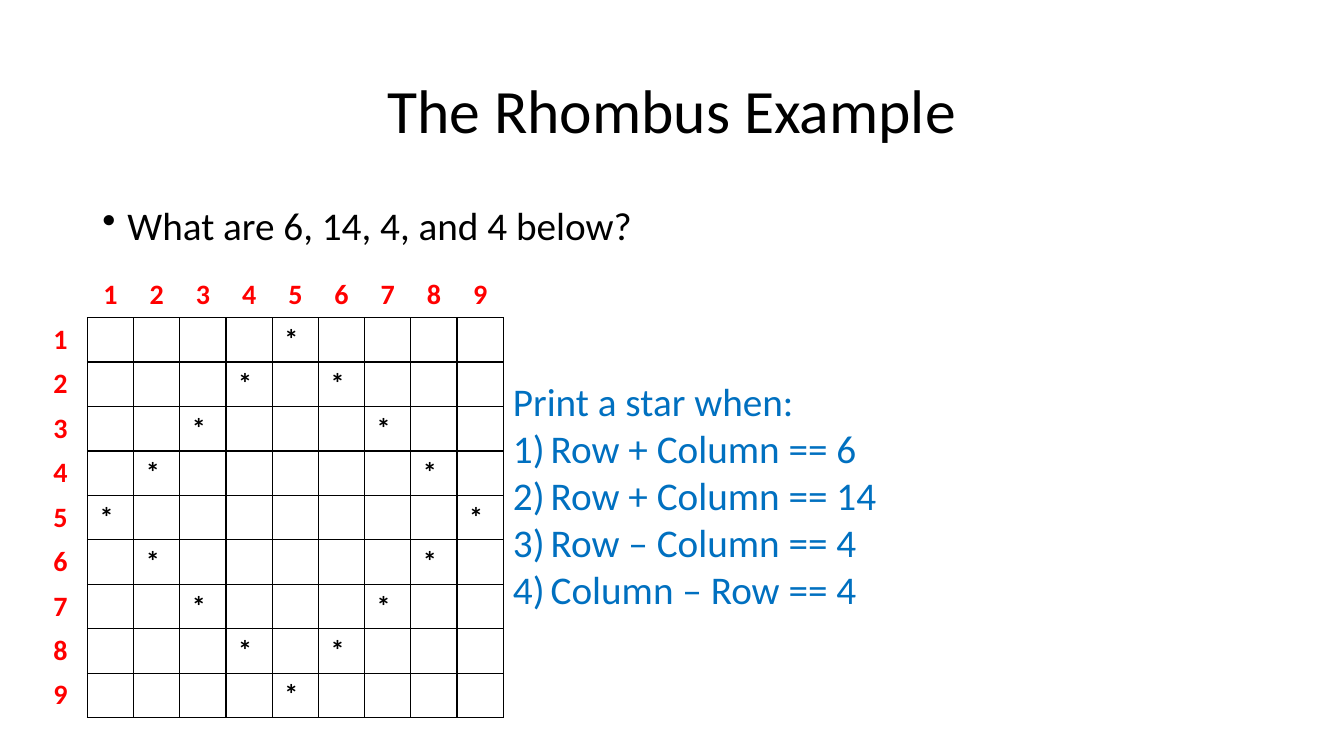
from pptx import Presentation
from pptx.dml.color import RGBColor
from pptx.enum.text import MSO_ANCHOR as Anchor, PP_ALIGN as Align
from pptx.util import Pt
from pptx.oxml import parse_xml
from pptx.oxml.ns import nsdecls

BLACK = RGBColor(0x00, 0x00, 0x00)
RED = RGBColor(0xFF, 0x00, 0x00)
BLUE = RGBColor(0x00, 0x70, 0xC0)
FONT = "Calibri"

# Content
TITLE = "The Rhombus Example"
QUESTION = "What are 6, 14, 4, and 4 below?"
RULES_HEADING = "Print a star when:"
RULES = ["Row + Column == 6", "Row + Column == 14",
         "Row – Column == 4", "Column – Row == 4"]
GRID_SIZE = 9


def is_star(row, column):
    return row + column in (6, 14) or abs(row - column) == 4


# Layout
GRID_LEFT, GRID_TOP = 29.5, 195.1
COLUMN_WIDTH, ROW_HEIGHT = 33, 31.75

deck = Presentation()
deck.slide_width, deck.slide_height = Pt(960), Pt(540)
slide = deck.slides.add_slide(deck.slide_layouts[6])


def style(paragraph, size, color, bold=False):
    font = paragraph.font
    font.name, font.size, font.bold = FONT, Pt(size), bold
    font.color.rgb = color


def add_text(left, top, width, height, lines, size, color, wrap=True):
    box = slide.shapes.add_textbox(Pt(left), Pt(top), Pt(width), Pt(height))
    frame = box.text_frame
    frame.word_wrap = wrap
    frame.text = "\n".join(lines)
    for paragraph in frame.paragraphs:
        style(paragraph, size, color)
    return frame


def add_bullet(paragraph, bullet, indent):
    properties = paragraph._p.get_or_add_pPr()
    properties.set("marL", str(Pt(indent)))
    properties.set("indent", str(Pt(-indent)))
    # The bullet comes before the default run properties
    properties.insert_element_before(
        parse_xml(f"<a:{bullet} {nsdecls('a')}/>"), "a:defRPr")


def set_borders(cell, visible):
    properties = cell._tc.get_or_add_tcPr()
    line = f'<a:solidFill><a:srgbClr val="{BLACK}"/></a:solidFill>'
    for index, side in enumerate("LRTB"):
        paint = line if side in visible else "<a:noFill/>"
        properties.insert(index, parse_xml(
            f'<a:ln{side} w="{Pt(1)}" {nsdecls("a")}>{paint}</a:ln{side}>'))


# Title
title = add_text(66, 28.75, 828, 104.4, [TITLE], 44, BLACK)
title.vertical_anchor = Anchor.MIDDLE
title.paragraphs[0].alignment = Align.CENTER
title.paragraphs[0].line_spacing = 0.9

# Question
question = add_text(66, 143.75, 828, 40, [QUESTION], 28, BLACK).paragraphs[0]
question.line_spacing = 0.9
question.space_before = Pt(10)
add_bullet(question, 'buChar char="•"', 18)

# Star grid, with row and column numbers in red
count = GRID_SIZE + 1
grid = slide.shapes.add_table(
    count, count, Pt(GRID_LEFT), Pt(GRID_TOP),
    Pt(count * COLUMN_WIDTH), Pt(count * ROW_HEIGHT)).table
grid.first_row = grid.horz_banding = False
for column in grid.columns:
    column.width = Pt(COLUMN_WIDTH)
for row in grid.rows:
    row.height = Pt(ROW_HEIGHT)

for row in range(count):
    for column in range(count):
        cell = grid.cell(row, column)
        cell.margin_left = cell.margin_right = Pt(8.64)
        cell.fill.background()
        is_number = row == 0 or column == 0
        if is_number:
            cell.text = str(row + column) if row + column else ""
            visible = "B" if column else "R" if row else ""
        else:
            cell.text = "*" if is_star(row, column) else ""
            visible = "LRTB"
        set_borders(cell, visible)
        paragraph = cell.text_frame.paragraphs[0]
        paragraph.alignment = Align.LEFT if row else Align.CENTER
        style(paragraph, 20, RED if is_number else BLACK, bold=True)

# Rules for printing a star
rules = add_text(359.3, 265.7, 277.2, 177.1, [RULES_HEADING] + RULES,
                 28, BLUE, wrap=False)
for rule in rules.paragraphs[1:]:
    add_bullet(rule, 'buAutoNum type="arabicParenR"', 27)

deck.save("out.pptx")
